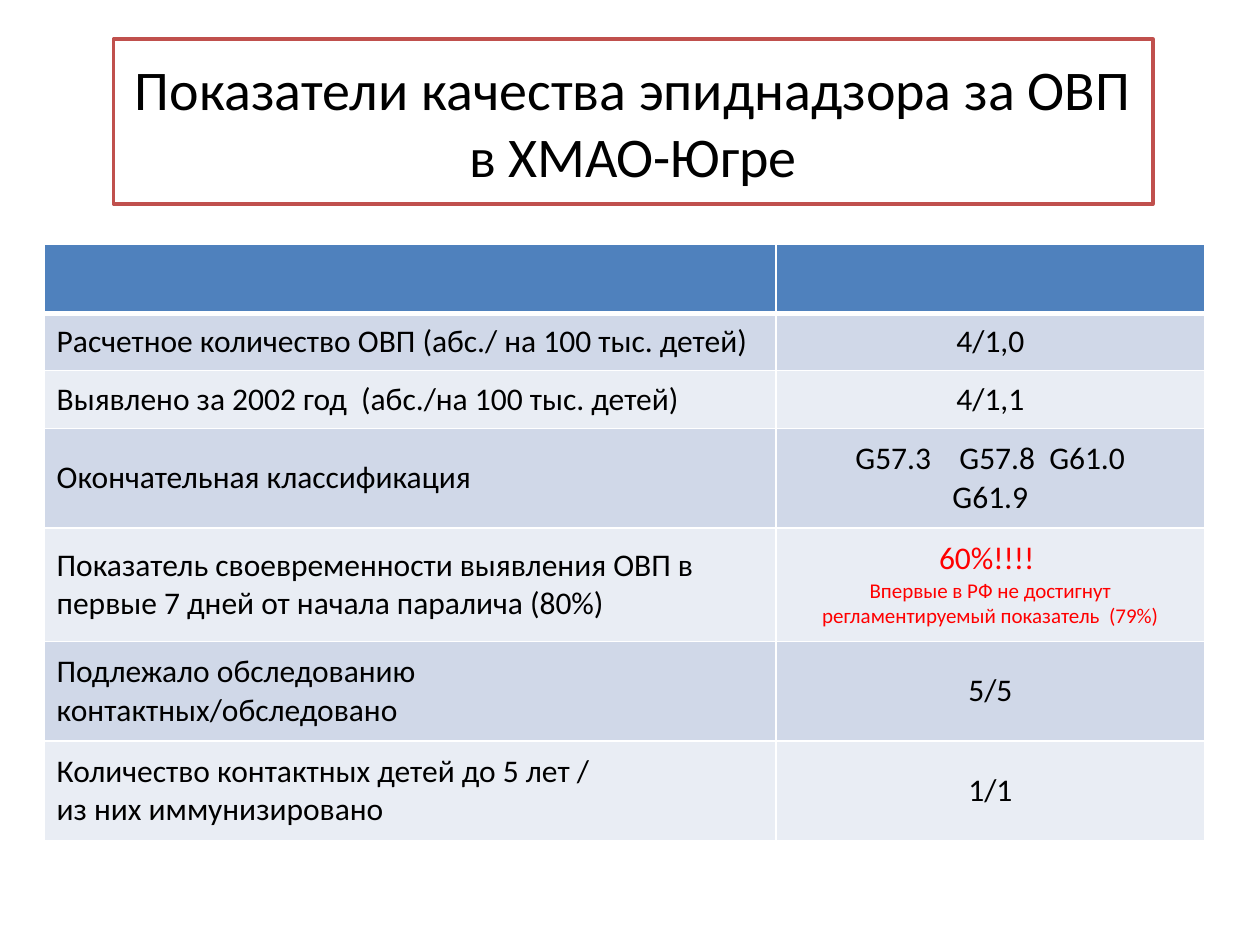
from dataclasses import dataclass

from lxml import etree
from pptx import Presentation
from pptx.dml.color import RGBColor
from pptx.enum import shapes, text
from pptx.oxml.ns import qn
from pptx.util import Inches, Pt

BLACK, RED, WHITE = "000000", "FF0000", "FFFFFF"
HEADER, BANDS = "4F81BD", ("D0D8E8", "E9EDF4")
LEFT, CENTER = text.PP_ALIGN.LEFT, text.PP_ALIGN.CENTER


@dataclass
class Line:
    words: str
    size: float = 18
    color: str = BLACK


@dataclass
class Row:
    height: float
    label: list[Line]
    value: list[Line]


ROWS = [
    Row(0.45, [Line("Расчетное количество ОВП (абс./ на 100 тыс. детей)")], [Line("4/1,0")]),
    Row(0.46, [Line("Выявлено за 2002 год  (абс./на 100 тыс. детей)")], [Line("4/1,1")]),
    Row(0.79, [Line("Окончательная классификация")],
        [Line("G57.3    G57.8  G61.0"), Line("G61.9")]),
    Row(0.9, [Line("Показатель своевременности выявления ОВП в первые 7 дней от начала паралича (80%)")],
        [Line("60%!!!! ", color=RED),
         Line("Впервые в РФ не достигнут регламентируемый показатель  (79%)", 12, RED)]),
    Row(0.79, [Line("Подлежало обследованию контактных/обследовано")], [Line("5/5")]),
    Row(0.79, [Line("Количество контактных детей до 5 лет /"), Line("из них иммунизировано")],
        [Line("1/1")]),
]
HEADER_HEIGHT = 0.55
COLUMNS = (5.81, 3.4)


def rgb(value: str) -> RGBColor:
    return RGBColor.from_string(value)


def paint(fill, color: str) -> None:
    fill.solid()
    fill.fore_color.rgb = rgb(color)


def write(tf, lines: list[Line], align) -> None:
    for i, line in enumerate(lines):
        p = tf.add_paragraph() if i else tf.paragraphs[0]
        p.alignment = align
        r = p.add_run()
        r.text = line.words
        for name, value in {"name": "Calibri", "size": Pt(line.size), "bold": False}.items():
            setattr(r.font, name, value)
        r.font.color.rgb = rgb(line.color)


def add_borders(cell, widths: dict[str, float]) -> None:
    props = cell._tc.get_or_add_tcPr()
    for i, (side, width) in enumerate(widths.items()):
        ln = etree.Element(qn(f"a:ln{side}"), w=str(Pt(width)))
        fill = etree.SubElement(ln, qn("a:solidFill"))
        etree.SubElement(fill, qn("a:srgbClr"), val=WHITE)
        props.insert(i, ln)


def add_title(s, line: Line) -> None:
    sp = s.shapes.add_shape(shapes.MSO_SHAPE.RECTANGLE,
                            Inches(0.9), Inches(0.31), Inches(8.25), Inches(1.31))
    sp.shadow.inherit = False
    paint(sp.fill, WHITE)
    sp.line.color.rgb = rgb("C0504D")
    sp.line.width = Pt(2)
    tf = sp.text_frame
    for name, value in {"word_wrap": True, "vertical_anchor": text.MSO_ANCHOR.MIDDLE}.items():
        setattr(tf, name, value)
    write(tf, [line], CENTER)


def add_indicators(s, rows: list[Row]) -> None:
    heights = [HEADER_HEIGHT] + [row.height for row in rows]
    table = s.shapes.add_table(len(heights), len(COLUMNS), Inches(0.35), Inches(1.94),
                               Inches(sum(COLUMNS)), Inches(sum(heights))).table
    for column, width in zip(table.columns, COLUMNS):
        column.width = Inches(width)
    for i, height in enumerate(heights):
        table.rows[i].height = Inches(height)
        for cell in table.rows[i].cells:
            paint(cell.fill, BANDS[(i - 1) % 2] if i else HEADER)
            cell.vertical_anchor = text.MSO_ANCHOR.MIDDLE
            add_borders(cell, {"L": 1, "R": 1, "T": 3 if i == 1 else 1, "B": 1 if i else 3})
    for i, row in enumerate(rows, 1):
        write(table.cell(i, 0).text_frame, row.label, LEFT)
        write(table.cell(i, 1).text_frame, row.value, CENTER)


def main() -> None:
    prs = Presentation()
    prs.slide_width, prs.slide_height = Inches(10), Inches(7.5)
    s = prs.slides.add_slide(prs.slide_layouts[6])
    add_title(s, Line("Показатели качества эпиднадзора за ОВП в ХМАО-Югре", 32))
    add_indicators(s, ROWS)
    prs.save("out.pptx")


if __name__ == "__main__":
    main()
